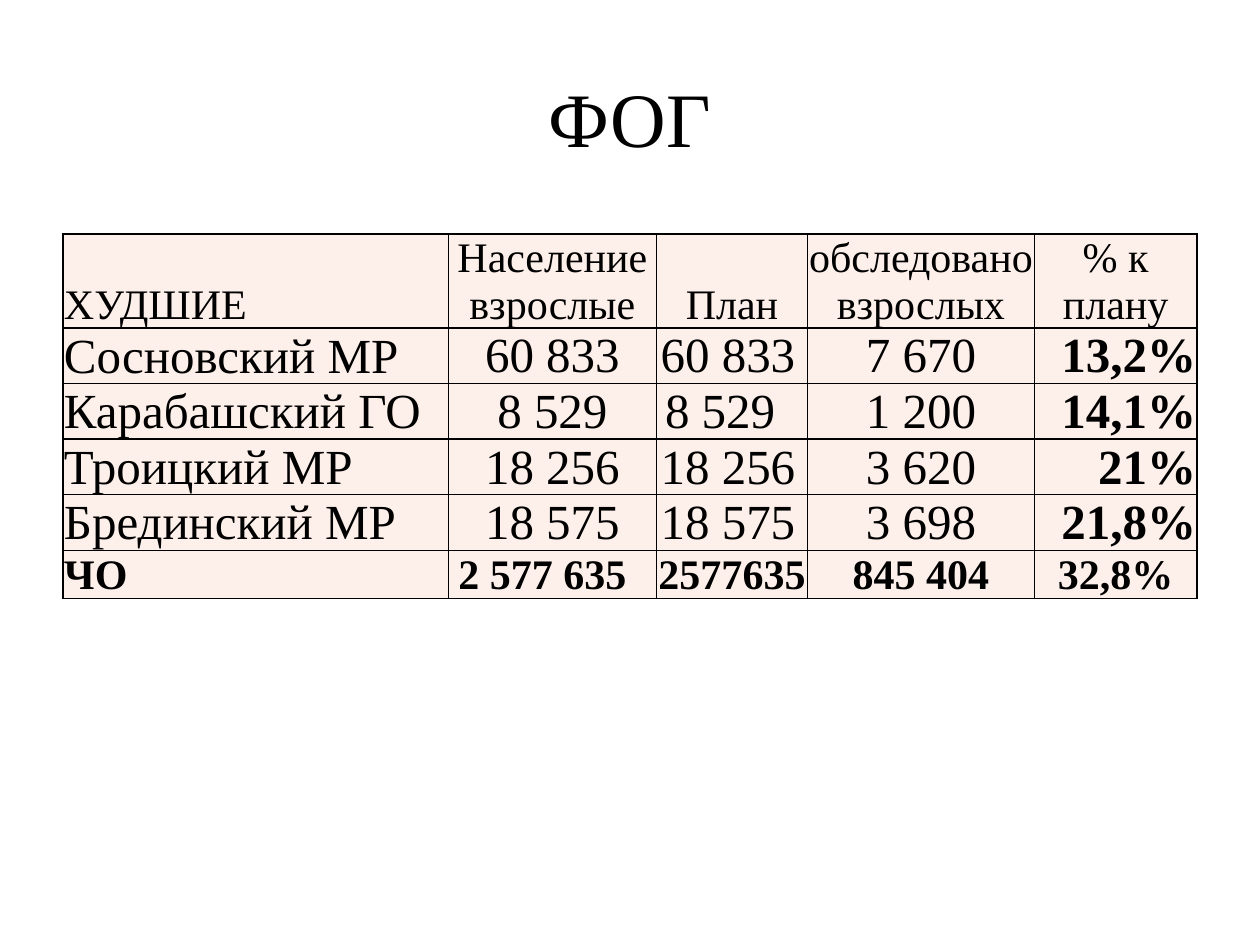
from lxml.etree import SubElement
from pptx import Presentation
from pptx.dml.color import RGBColor
from pptx.enum.text import MSO_ANCHOR, PP_ALIGN
from pptx.oxml.ns import qn
from pptx.util import Cm, Pt

FONT = "Times New Roman"
INK = "000000"
CELL_FILL = "FDEFE9"
INSET = 0.02

COLUMN_WIDTHS = [7.77, 4.19, 3.05, 4.57, 3.28]
HEADER_HEIGHT, DISTRICT_HEIGHT, TOTAL_HEIGHT = 1.89, 1.12, 0.97

HEADER = ["ХУДШИЕ", "Население взрослые", "План", "обследовано взрослых", "% к плану"]
DISTRICTS = [
    ["Сосновский МР", "60 833", "60 833", "7 670", "13,2%"],
    ["Карабашский ГО", "8 529", "8 529", "1 200", "14,1%"],
    ["Троицкий МР", "18 256", "18 256", "3 620", "21%"],
    ["Брединский МР", "18 575", "18 575", "3 698", "21,8%"],
]
TOTAL = ["ЧО", "2 577 635", "2577635", "845 404", "32,8%"]

LEFT, CENTER, RIGHT = PP_ALIGN.LEFT, PP_ALIGN.CENTER, PP_ALIGN.RIGHT
SUMMARY_ALIGNS = [LEFT] + [CENTER] * 4
DISTRICT_ALIGNS = [LEFT, CENTER, RIGHT, CENTER, RIGHT]


def color(value):
    return RGBColor.from_string(value)


def write(frame, text, size, align=LEFT, bold=False):
    para = frame.paragraphs[0]
    para.alignment = align
    span = para.add_run()
    span.text = text
    span.font.name = FONT
    span.font.size = Pt(size)
    span.font.bold = bold
    span.font.color.rgb = color(INK)


def add_borders(cell, width=1):
    properties = cell._tc.get_or_add_tcPr()
    for side in ("lnL", "lnR", "lnT", "lnB"):
        line = SubElement(properties, qn(f"a:{side}"), w=str(Pt(width)))
        fill = SubElement(line, qn("a:solidFill"))
        SubElement(fill, qn("a:srgbClr"), val=INK)


def fill_cell(cell, text, anchor=MSO_ANCHOR.MIDDLE, right=INSET, **text_format):
    add_borders(cell)
    cell.fill.solid()
    cell.fill.fore_color.rgb = color(CELL_FILL)
    cell.margin_left = cell.margin_top = Cm(INSET)
    cell.margin_right = Cm(right)
    cell.margin_bottom = 0
    cell.vertical_anchor = anchor
    write(cell.text_frame, text, **text_format)


def add_title(page, text):
    title = page.shapes.title
    title.left, title.top, title.width, title.height = Cm(1.27), Cm(0.76), Cm(22.86), Cm(3.18)
    title.text_frame.vertical_anchor = MSO_ANCHOR.MIDDLE
    write(title.text_frame, text, size=44, align=CENTER)


def add_grid(page, heights):
    table = page.shapes.add_table(
        len(heights), len(COLUMN_WIDTHS), Cm(1.27), Cm(4.72),
        Cm(sum(COLUMN_WIDTHS)), Cm(sum(heights))).table
    table.first_row = table.horz_banding = False
    for column, width in zip(table.columns, COLUMN_WIDTHS):
        column.width = Cm(width)
    for row, height in zip(table.rows, heights):
        row.height = Cm(height)
    return table


def fill_header(row):
    for cell, text, align in zip(row.cells, HEADER, SUMMARY_ALIGNS):
        fill_cell(cell, text, anchor=MSO_ANCHOR.BOTTOM, size=24, align=align)


def fill_district(row, values):
    """The plan column stands off its right edge; short numbers are centred."""
    short_plan = len(values[2]) < 6
    for index, (cell, text) in enumerate(zip(row.cells, values)):
        align, right = DISTRICT_ALIGNS[index], INSET
        if index == 2:
            align, right = (CENTER, 0.5) if short_plan else (RIGHT, 0.25)
        fill_cell(cell, text, right=right, size=28, align=align, bold=index == 4,
                  anchor=MSO_ANCHOR.MIDDLE if index else MSO_ANCHOR.BOTTOM)


def fill_total(row):
    for index, (cell, text) in enumerate(zip(row.cells, TOTAL)):
        fill_cell(cell, text, right=0.42 if index == 1 else INSET, size=24,
                  align=SUMMARY_ALIGNS[index], bold=True,
                  anchor=MSO_ANCHOR.MIDDLE if index else MSO_ANCHOR.BOTTOM)


def main():
    deck = Presentation()
    deck.slide_width, deck.slide_height = Cm(25.4), Cm(19.05)
    page = deck.slides.add_slide(deck.slide_layouts[5])
    add_title(page, "ФОГ")
    heights = [HEADER_HEIGHT] + [DISTRICT_HEIGHT] * len(DISTRICTS) + [TOTAL_HEIGHT]
    header, *districts, total = add_grid(page, heights).rows
    fill_header(header)
    for row, values in zip(districts, DISTRICTS):
        fill_district(row, values)
    fill_total(total)
    deck.save("out.pptx")


if __name__ == "__main__":
    main()
